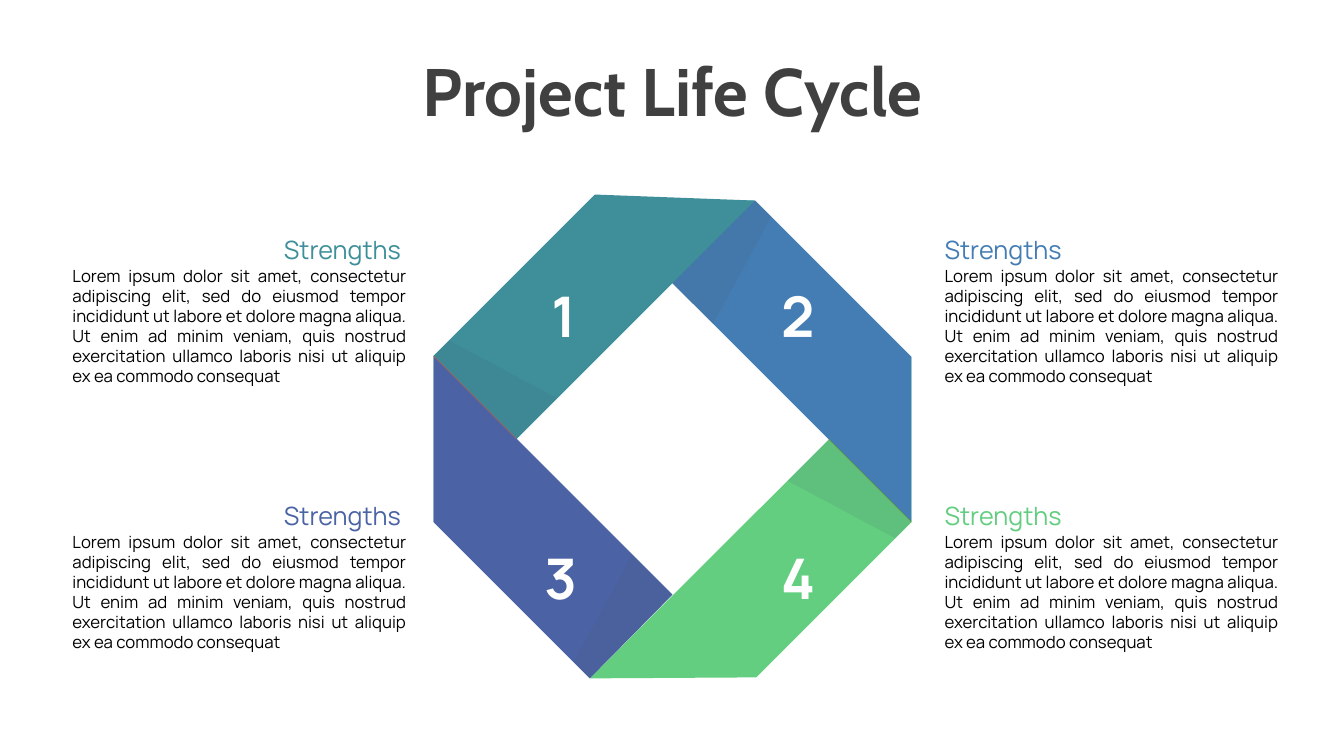
import pptx
import pptx.util
import pptx.dml.color
import pptx.enum.shapes
import pptx.enum.text
import pptx.oxml
import pptx.oxml.ns
import lxml.etree

PX = 9144  # 100 px to the inch
COLORS = {
    "teal": "3E8F9A", "blue": "447DB3", "indigo": "4B63A4", "green": "63CD80",
    "fold": "44546A", "lime": "82AF00", "orange": "DF5D28",
    "title": "404040", "body": "000000", "white": "FFFFFF",
}
ALIGN = pptx.enum.text.PP_ALIGN
BODY = (
    "Lorem ipsum dolor sit amet, consectetur adipiscing elit, sed do eiusmod tempor "
    "incididunt ut labore et dolore magna aliqua. Ut enim ad minim veniam, quis nostrud "
    "exercitation ullamco laboris nisi ut aliquip ex ea commodo consequat"
)

# Ring geometry, relative to the corner of its box
RING_BOX = (430, 193, 474, 480)
BANDS = [
    ("green", [(155, 480), (474, 161), (474, 325), (320, 479)]),
    ("blue", [(474, 325), (155, 6), (319, 6), (474, 161)]),
    ("teal", [(0, 160), (160, 0), (319, 6), (0, 325)]),
    ("indigo", [(155, 480), (0, 325), (0, 160), (237, 397)]),
]
FOLDS = [
    [(335, 22), (319, 6), (237, 88), (277, 129)],
    [(237, 397), (197, 357), (139, 464), (155, 480)],
    [(474, 325), (392, 243), (351, 284), (458, 341)],
    [(122, 202), (16, 145), (0, 160), (82, 242)],
]
CREASES = [("lime", (392, 243), (474, 325)), ("orange", (0, 160), (82, 242))]
NUMBERS = [("1", 107, 81), ("2", 335, 81), ("3", 100, 341), ("4", 335, 341)]


def rgb(name):
    return pptx.dml.color.RGBColor.from_string(COLORS[name])


def style(run, size, color, bold=False, font="Manrope"):
    run.font.name = font
    run.font.size = pptx.util.Pt(size)
    run.font.bold = bold
    run.font.color.rgb = rgb(color)


def add_text_box(slide, box, text):
    shape = slide.shapes.add_textbox(*(value * PX for value in box))
    shape.text_frame.word_wrap = True
    shape.text_frame.text = text
    return shape.text_frame


def add_outline(shapes, origin, points, color, alpha=None):
    left, top = origin
    builder = shapes.build_freeform(left + points[0][0], top + points[0][1], scale=PX)
    builder.add_line_segments([(left + x, top + y) for x, y in points[1:]], close=True)
    shape = builder.convert_to_shape()
    shape.shadow.inherit = False
    shape.fill.solid()
    shape.fill.fore_color.rgb = rgb(color)
    shape.line.fill.background()
    if alpha is not None:
        fill_color = shape.fill._xPr.find(".//" + pptx.oxml.ns.qn("a:srgbClr"))
        lxml.etree.SubElement(fill_color, pptx.oxml.ns.qn("a:alpha"), val=str(alpha * 1000))


def add_title(slide, box):
    frame = add_text_box(slide, box, "Project Life Cycle")
    frame.paragraphs[0].alignment = ALIGN.CENTER
    style(frame.paragraphs[0].runs[0], 48, "title", True, "Cabin")


def add_ring(slide, box):
    left, top = box[:2]
    shapes = slide.shapes.add_group_shape().shapes
    # Coloured bands with shaded folds on top
    for color, points in BANDS:
        add_outline(shapes, (left, top), points, color)
    for points in FOLDS:
        add_outline(shapes, (left, top), points, "fold", alpha=10)
    # Hairline creases
    for color, start, end in CREASES:
        crease = shapes.add_connector(
            pptx.enum.shapes.MSO_CONNECTOR.STRAIGHT,
            (left + start[0]) * PX, (top + start[1]) * PX,
            (left + end[0]) * PX, (top + end[1]) * PX)
        crease.line.color.rgb = rgb(color)
        crease.line.width = pptx.util.Pt(0.25)
        properties = crease._element.spPr
        lxml.etree.SubElement(properties, pptx.oxml.ns.qn("a:effectLst"))
    # Step numbers
    for number, x, y in NUMBERS:
        frame = add_text_box(slide, (left + x, top + y, 52, 77), number)
        style(frame.paragraphs[0].runs[0], 40, "white", True)


def add_callout(slide, box, color, alignment):
    frame = add_text_box(slide, box, "Strengths")
    frame.vertical_anchor = pptx.enum.text.MSO_ANCHOR.MIDDLE
    heading = frame.paragraphs[0]
    heading.alignment = alignment
    style(heading.runs[0], 18, color)
    space = heading.add_run()
    space.text = " "
    style(space, 20, color, True)
    body = frame.add_paragraph()
    body.text = BODY
    body.alignment = ALIGN.JUSTIFY
    style(body.runs[0], 12, "body")


def main():
    presentation = pptx.Presentation()
    presentation.slide_width = 1333 * PX
    presentation.slide_height = 750 * PX
    slide = presentation.slides.add_slide(presentation.slide_layouts[6])
    add_ring(slide, RING_BOX)
    columns = [(62, ALIGN.RIGHT, ("teal", "indigo")), (927, ALIGN.JUSTIFY, ("blue", "green"))]
    for left, alignment, colors in columns:
        for row, color in enumerate(colors):
            add_callout(slide, (left, 208 + row * 264, 351, 197), color, alignment)
    add_title(slide, (140, 44, 1054, 91))
    presentation.save("out.pptx")


if __name__ == "__main__":
    main()
